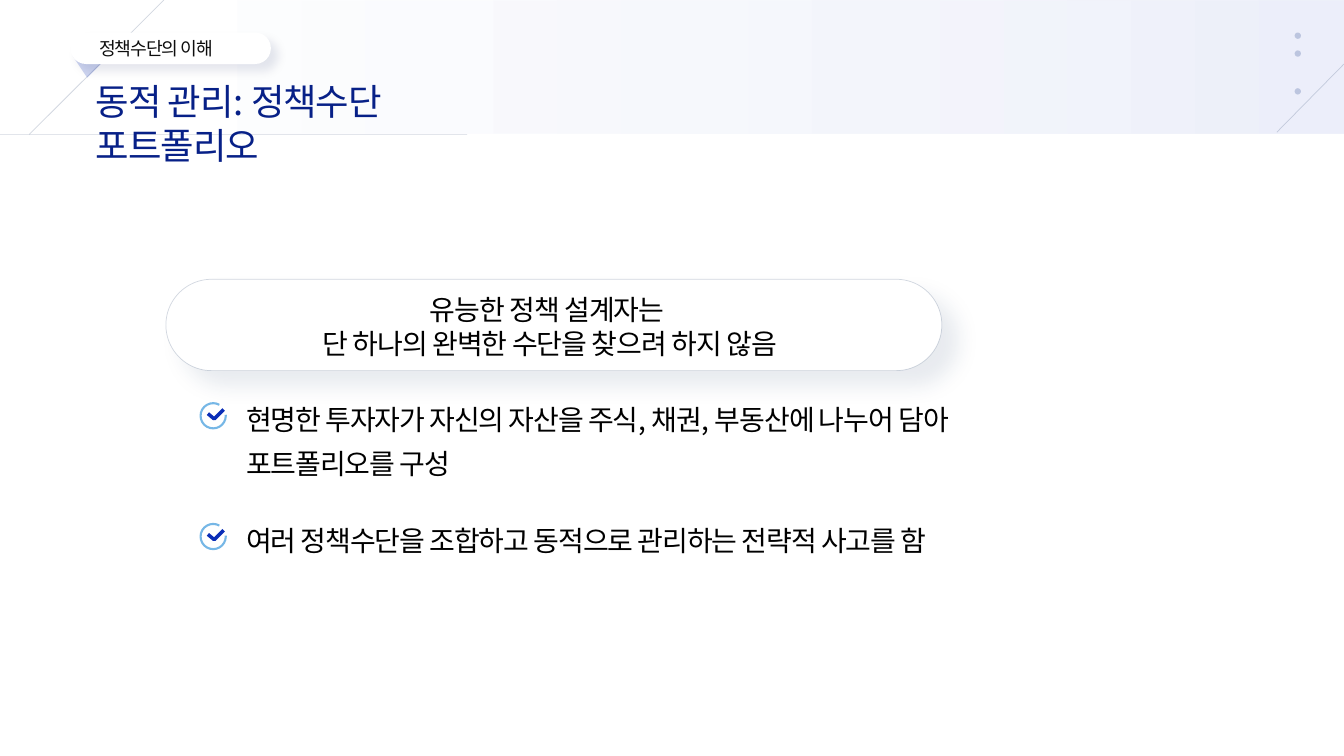
from lxml.etree import SubElement
from pptx import Presentation
from pptx.dml.color import RGBColor
from pptx.enum.shapes import MSO_CONNECTOR, MSO_SHAPE as SHAPE
from pptx.enum.text import MSO_ANCHOR, PP_ALIGN
from pptx.oxml.ns import qn
from pptx.util import Pt

PX = 9525
FONT = "Noto Sans CJK KR"
WHITE = RGBColor(0xFF, 0xFF, 0xFF)
BLACK = RGBColor(0x00, 0x00, 0x00)
INK = RGBColor(0x0D, 0x0D, 0x0D)
BLUE = RGBColor(0x0B, 0x2E, 0xB7)
TITLE_BLUE = RGBColor(0x07, 0x20, 0x87)
DOT_BLUE = RGBColor(0x00, 0x23, 0x73)
RULE_BLUE = RGBColor(0x1F, 0x3C, 0x67)
SKY = RGBColor(0x76, 0xB7, 0xE6)
SHADE = RGBColor(0x04, 0x13, 0x54)


def px(*lengths):
    return [round(length * PX) for length in lengths]


def set_alpha(shape, *percents):
    """Set the opacity of each explicit colour of a shape, in order."""
    for color, percent in zip(shape._element.spPr.iter(qn("a:srgbClr")), percents):
        SubElement(color, qn("a:alpha"), val=str(percent * 1000))


def add_shadow(shape, color, size):
    effects = shape._element.spPr.find(qn("a:effectLst"))
    shadow = SubElement(effects, qn("a:outerShdw"), blurRad=str(Pt(size)),
                        dist=str(Pt(size)), dir="2700000", algn="tl", rotWithShape="0")
    tint = SubElement(shadow, qn("a:srgbClr"), val=str(color))
    SubElement(tint, qn("a:alpha"), val="10000")


def paint(shape, fill=None, line=None, width=0.5):
    shape.shadow.inherit = False
    if fill is None:
        shape.fill.background()
    else:
        shape.fill.solid()
        shape.fill.fore_color.rgb = fill
    if line is None:
        shape.line.fill.background()
    else:
        shape.line.color.rgb = line
        shape.line.width = Pt(width)
    return shape


def add_preset(slide, kind, box, **look):
    return paint(slide.shapes.add_shape(kind, *px(*box)), **look)


def add_path(slide, points, close, **look):
    builder = slide.shapes.build_freeform(*points[0], scale=PX)
    builder.add_line_segments(points[1:], close=close)
    return paint(builder.convert_to_shape(), **look)


def add_rule(slide, start, end):
    rule = slide.shapes.add_connector(MSO_CONNECTOR.STRAIGHT, *px(*start, *end))
    rule.line.color.rgb = RULE_BLUE
    rule.line.width = Pt(0.5)
    set_alpha(rule, 20)
    SubElement(rule._element.spPr, qn("a:effectLst"))


def write(frame, text, size, color, tracking, align=PP_ALIGN.LEFT, spacing=None):
    frame.word_wrap = True
    paragraph = frame.paragraphs[0]
    paragraph.text = text
    paragraph.alignment = align
    if spacing:
        paragraph.line_spacing = spacing
    font = paragraph.font
    font.size, font.name = Pt(size), FONT
    font.color.rgb = color
    defaults = paragraph._p.pPr.find(qn("a:defRPr"))
    defaults.set("spc", str(round(tracking * 100)))
    SubElement(defaults, qn("a:ea"), typeface=FONT)


def add_text(slide, box, *args, **options):
    write(slide.shapes.add_textbox(*px(*box)).text_frame, *args, **options)


def add_header_band(slide, left, top, width, height):
    band = add_preset(slide, SHAPE.RECTANGLE, (left, top, width, height), fill=BLUE)
    band.fill.gradient()
    band.fill.gradient_angle = 0
    for stop, position in zip(band.fill.gradient_stops, (0.16, 1)):
        stop.color.rgb = BLUE
        stop.position = position
    set_alpha(band, 0, 7)

    # Thin rules and the column of dots
    right, bottom = left + width, top + height
    add_rule(slide, (right, top + 60), (right - 64, bottom - 1))
    add_rule(slide, (0, bottom + 1), (445, bottom + 1))
    add_rule(slide, (156, 0), (28, bottom + 1))
    for dot_top in (30, 47, 83):
        dot = add_preset(slide, SHAPE.OVAL, (right - 47, top + dot_top, 6, 6), fill=DOT_BLUE)
        set_alpha(dot, 20)


def add_section_tag(slide, left, top, width, height, text):
    # Folded tail under the pill
    tail = add_path(slide, [(left + 2, top + 22), (left + 16, top + 43), (left + 31, top + 28)],
                    True, fill=BLUE)
    set_alpha(tail, 20)
    pill = add_preset(slide, SHAPE.ROUNDED_RECTANGLE, (left, top, width, height), fill=WHITE)
    pill.adjustments[0] = 0.5
    add_shadow(pill, SHADE, 7)
    frame = pill.text_frame
    frame.margin_left, frame.margin_right, frame.margin_top, frame.margin_bottom = px(23, 23, 0, 0)
    frame.vertical_anchor = MSO_ANCHOR.MIDDLE
    write(frame, text, 13, INK, -0.7)


def add_key_message(slide, left, top, width, height, text):
    capsule = add_preset(slide, SHAPE.ROUNDED_RECTANGLE, (left, top, width, height),
                         fill=WHITE, line=RULE_BLUE)
    capsule.adjustments[0] = 0.5
    set_alpha(capsule, 100, 20)
    add_shadow(capsule, RULE_BLUE, 15)
    add_text(slide, (left + 29, top + 8, width - 66, height - 13), text, 20, BLACK, -0.7,
             align=PP_ALIGN.CENTER)


def add_check_item(slide, left, top, width, height, text):
    add_text(slide, (left + 34, top, width - 34, height), text, 20, BLACK, -0.8, spacing=1.3)
    ring = add_preset(slide, SHAPE.ARC, (left, top + 15, 24, 24), line=SKY, width=1.5)
    ring.adjustments[0], ring.adjustments[1] = 213.33, 179.58
    add_path(slide, [(left + 7, top + 25), (left + 13, top + 30), (left + 22, top + 21)],
             False, line=BLUE, width=2.5)


def main():
    deck = Presentation()
    deck.slide_width, deck.slide_height = px(1280, 720)
    slide = deck.slides.add_slide(deck.slide_layouts[6])

    # Header
    add_header_band(slide, -11, 1, 1291, 126)
    add_section_tag(slide, 67, 31, 191, 30, "정책수단의 이해")
    add_text(slide, (82, 71, 444, 52), "동적 관리: 정책수단 포트폴리오", 26, TITLE_BLUE, -0.8)

    # Body
    add_key_message(slide, 158, 266, 739, 87,
                    "유능한 정책 설계자는 \v단 하나의 완벽한 수단을 찾으려 하지 않음")
    items = [
        (369, 90, "현명한 투자자가 자신의 자산을 주식, 채권, 부동산에 나누어 담아 포트폴리오를 구성"),
        (484, 49, "여러 정책수단을 조합하고 동적으로 관리하는 전략적 사고를 함"),
    ]
    for top, height, text in items:
        add_check_item(slide, 191, top, 733, height, text)

    deck.save("out.pptx")


if __name__ == "__main__":
    main()
